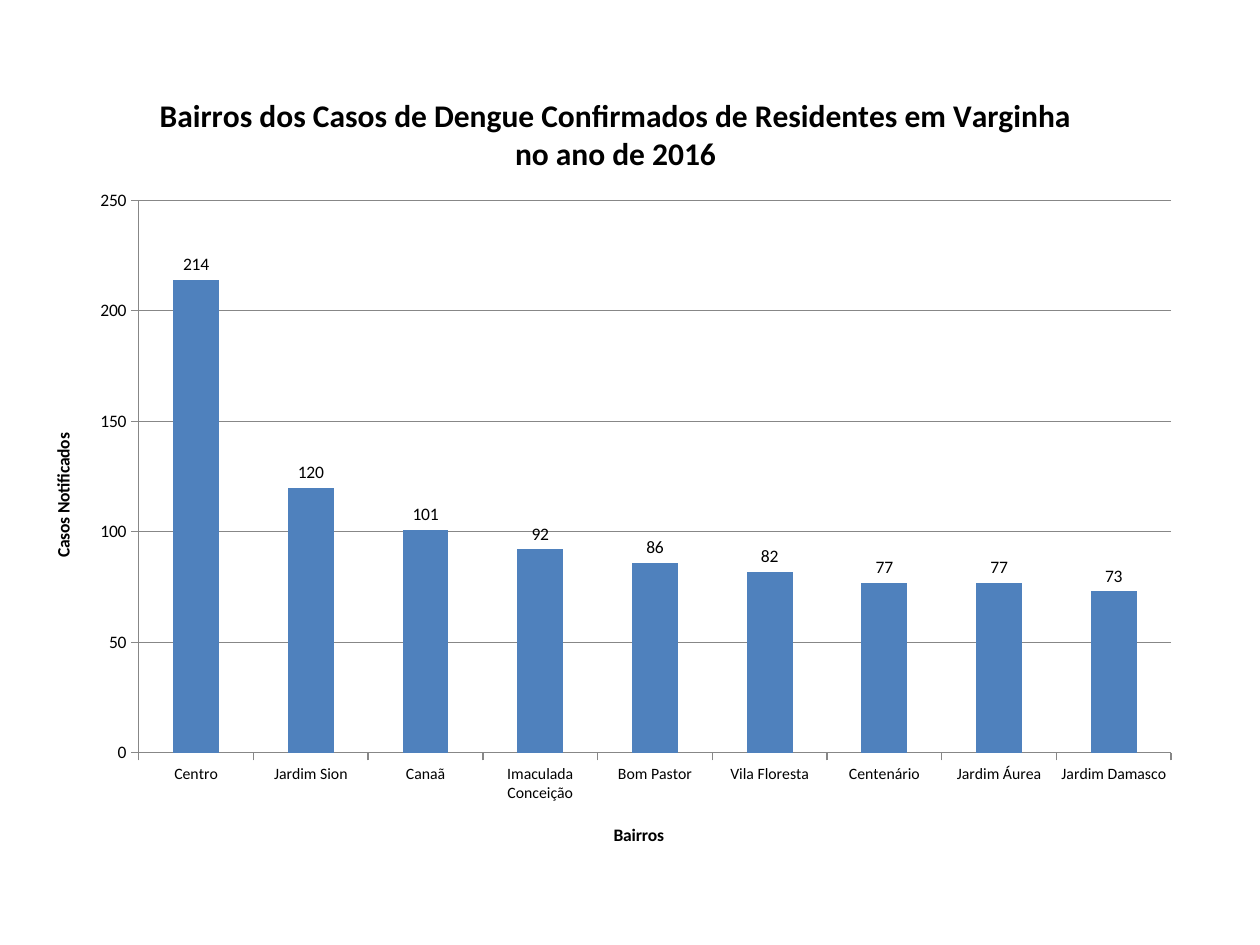
from lxml import etree
from pptx import Presentation
from pptx.chart.data import CategoryChartData
from pptx.dml.color import RGBColor
from pptx.enum.chart import XL_CHART_TYPE, XL_LABEL_POSITION, XL_TICK_MARK
from pptx.oxml.ns import qn
from pptx.util import Inches, Pt

COLUMN = XL_CHART_TYPE.COLUMN_CLUSTERED
OUT_END = XL_LABEL_POSITION.OUTSIDE_END
OUTSIDE = XL_TICK_MARK.OUTSIDE
FONT = "Calibri"
BLACK, GRAY, BLUE = "000000", "878787", "4F81BD"
TITLE = "Bairros dos Casos de Dengue Confirmados de Residentes em Varginha no ano de 2016"
CASES = {
    "Centro": 214,
    "Jardim Sion": 120,
    "Canaã": 101,
    "Imaculada Conceição": 92,
    "Bom Pastor": 86,
    "Vila Floresta": 82,
    "Centenário": 77,
    "Jardim Áurea": 77,
    "Jardim Damasco": 73,
}


def color(code):
    """Turn a hex string into a colour."""
    return RGBColor.from_string(code)


def set_font(font, size, bold=False):
    """Set the face, size, weight and colour of a font."""
    font.name, font.size, font.bold = FONT, Pt(size), bold
    font.color.rgb = color(BLACK)


def set_line(line):
    """Draw a thin gray line."""
    line.color.rgb = color(GRAY)
    line.width = Pt(0.75)


def place(part, index, **spots):
    """Give a chart part a manual layout in fractions of the chart."""
    for old in part.findall(qn("c:layout")):
        part.remove(old)
    layout = etree.Element(qn("c:layout"))
    manual = etree.SubElement(layout, qn("c:manualLayout"))
    if "w" in spots:
        etree.SubElement(manual, qn("c:layoutTarget"), val="inner")
    for key in "xy":
        etree.SubElement(manual, qn(f"c:{key}Mode"), val="edge")
    for key, value in spots.items():
        etree.SubElement(manual, qn(f"c:{key}"), val=str(value))
    part.insert(index, layout)


def add_title(owner, text, size, x, y):
    """Title a chart or an axis."""
    owner.has_title = True
    title = owner.chart_title if hasattr(owner, "chart_title") else owner.axis_title
    title.text_frame.text = text
    set_font(title.text_frame.paragraphs[0].font, size, True)
    place(title._element, 1, x=x, y=y)


def style_axis(axis, size):
    """Set the line, ticks and labels of an axis."""
    axis.major_tick_mark = OUTSIDE
    set_line(axis.format.line)
    set_font(axis.tick_labels.font, size)


def style_bars(plot):
    """Set the colour, gap and labels of the columns."""
    plot.gap_width = 150
    plot.vary_by_categories = False
    fill = plot.series[0].format.fill
    fill.solid()
    fill.fore_color.rgb = color(BLUE)
    plot.has_data_labels = True
    labels = plot.data_labels
    labels.show_value = True
    labels.position = OUT_END
    set_font(labels.font, 10)


def add_chart(slide):
    """Add the column chart of cases by district."""
    data = CategoryChartData()
    data.categories = list(CASES)
    data.add_series("Series 1", list(CASES.values()))
    box = [Inches(n) for n in (0.2, 0.44, 9.29, 6.46)]
    chart = slide.shapes.add_chart(COLUMN, *box, data).chart
    chart.has_legend = False
    set_font(chart.font, 10)
    style_bars(chart.plots[0])
    names, values = chart.category_axis, chart.value_axis
    style_axis(names, 9)
    style_axis(values, 10)
    values.minimum_scale, values.maximum_scale, values.major_unit = 0, 250, 50
    set_line(values.major_gridlines.format.line)
    add_title(chart, TITLE, 18, 0.11, 0.04)
    add_title(names, "Bairros", 10, 0.5, 0.94)
    add_title(values, "Casos Notificados", 10, 0.02, 0.46)
    area = chart._chartSpace.find(f".//{qn('c:plotArea')}")
    place(area, 0, x=0.097, y=0.178, w=0.882, h=0.679)


def main():
    """Build and save the slide."""
    deck = Presentation()
    deck.slide_width, deck.slide_height = Inches(10), Inches(7.5)
    add_chart(deck.slides.add_slide(deck.slide_layouts[6]))
    deck.save("out.pptx")


if __name__ == "__main__":
    main()
